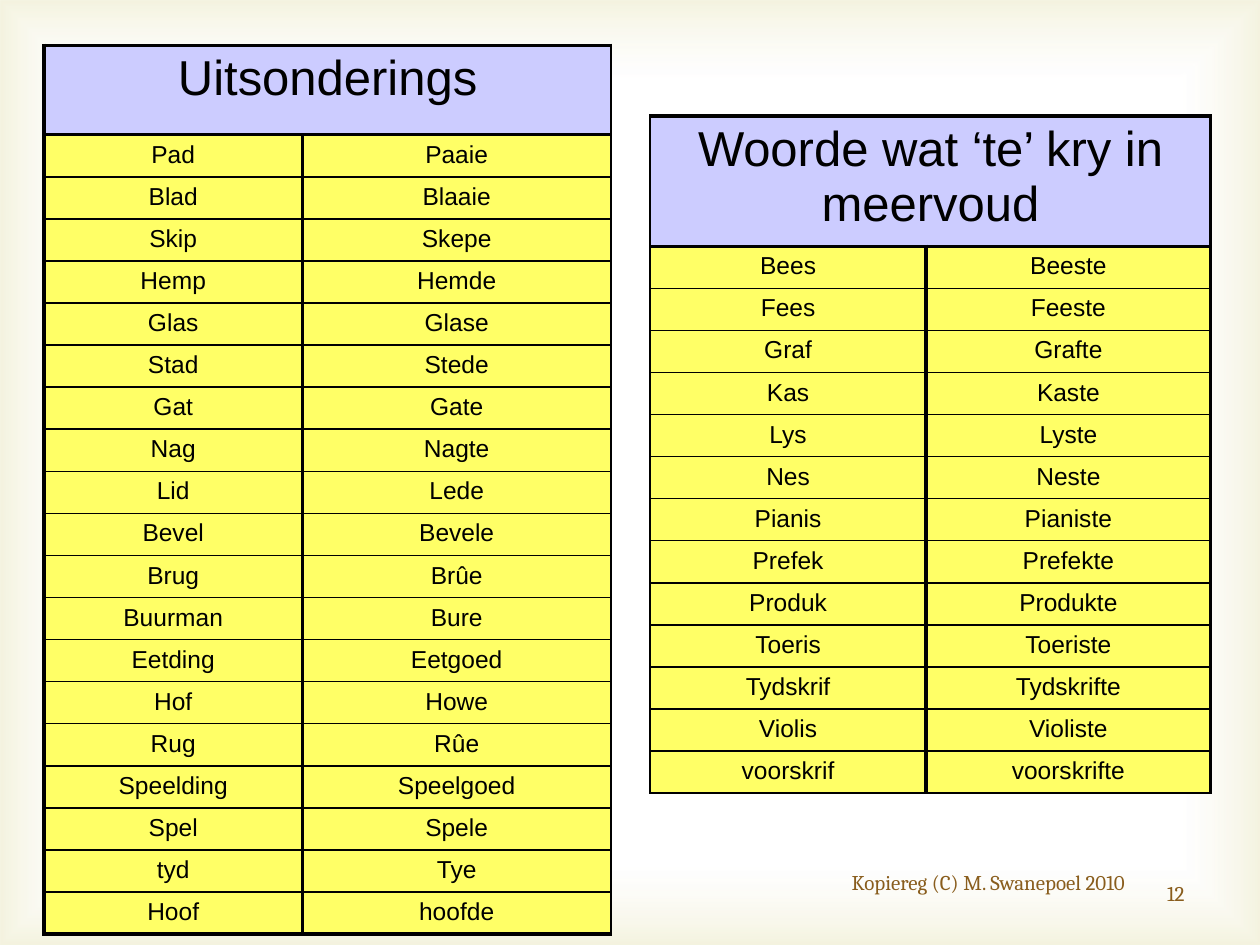
from lxml.etree import SubElement
from pptx import Presentation
from pptx.dml.color import RGBColor
from pptx.enum.shapes import MSO_SHAPE
from pptx.enum.text import MSO_ANCHOR, PP_ALIGN
from pptx.oxml import parse_xml
from pptx.oxml.ns import nsdecls, qn
from pptx.util import Inches, Pt

THIN, THICK = 1, 2.25
HEADER_HEIGHT, ROW_HEIGHT = 0.71, 0.33

EXCEPTIONS = [
    ("Pad", "Paaie"), ("Blad", "Blaaie"), ("Skip", "Skepe"),
    ("Hemp", "Hemde"), ("Glas", "Glase"), ("Stad", "Stede"),
    ("Gat", "Gate"), ("Nag", "Nagte"), ("Lid", "Lede"),
    ("Bevel", "Bevele"), ("Brug", "Brûe"), ("Buurman", "Bure"),
    ("Eetding", "Eetgoed"), ("Hof", "Howe"), ("Rug", "Rûe"),
    ("Speelding", "Speelgoed"), ("Spel", "Spele"), ("tyd", "Tye"),
    ("Hoof", "hoofde"),
]
TE_PLURALS = [
    ("Bees", "Beeste"), ("Fees", "Feeste"), ("Graf", "Grafte"),
    ("Kas", "Kaste"), ("Lys", "Lyste"), ("Nes", "Neste"),
    ("Pianis", "Pianiste"), ("Prefek", "Prefekte"),
    ("Produk", "Produkte"), ("Toeris", "Toeriste"),
    ("Tydskrif", "Tydskrifte"), ("Violis", "Violiste"),
    ("voorskrif", "voorskrifte"),
]


def rgb(value):
    return RGBColor.from_string(value)


def add_run(p, text, size, font, color):
    r = p.add_run()
    r.text = text
    r.font.size = Pt(size)
    r.font.name = font
    r.font.color.rgb = rgb(color)


def add_background(s, width, height):
    sp = s.shapes.add_shape(MSO_SHAPE.RECTANGLE, 0, 0, width, height)
    sp.shadow.inherit = False
    sp.line.fill.background()
    grad = parse_xml(
        f'<a:gradFill {nsdecls("a")} rotWithShape="1"><a:gsLst>'
        '<a:gs pos="83000"><a:srgbClr val="FFFFFF"><a:alpha val="11000"/></a:srgbClr></a:gs>'
        '<a:gs pos="100000"><a:srgbClr val="D1CA75"><a:alpha val="23000"/></a:srgbClr></a:gs>'
        '</a:gsLst><a:path path="rect">'
        '<a:fillToRect l="50000" t="50000" r="50000" b="50000"/></a:path></a:gradFill>')
    sp._element.spPr.find(qn("a:prstGeom")).addnext(grad)


def add_footer(s, text, left, top, width, align):
    sp = s.shapes.add_textbox(Inches(left), Inches(top), Inches(width), Inches(0.52))
    tf = sp.text_frame
    tf.word_wrap = True
    tf.vertical_anchor = MSO_ANCHOR.MIDDLE
    p = tf.paragraphs[0]
    p.alignment = align
    add_run(p, text, 12, "Cambria", "895D1D")


def set_borders(cell, left, right, top, bottom):
    tc_pr = cell._tc.get_or_add_tcPr()
    for side, width in zip("LRTB", (left, right, top, bottom)):
        ln = SubElement(tc_pr, qn(f"a:ln{side}"), w=str(Pt(width)))
        fill = SubElement(ln, qn("a:solidFill"))
        SubElement(fill, qn("a:srgbClr"), val="000000")


def write_cell(cell, text, size):
    p = cell.text_frame.paragraphs[0]
    p.alignment = PP_ALIGN.CENTER
    before = SubElement(p._p.get_or_add_pPr(), qn("a:spcBef"))
    SubElement(before, qn("a:spcPct"), val="20000")
    add_run(p, text, size, "Arial", "000000")


def add_word_table(s, title, words, left, top, widths, edges):
    left_edge, right_edge, bottom_edge = edges
    height = HEADER_HEIGHT + ROW_HEIGHT * len(words)
    table = s.shapes.add_table(len(words) + 1, 2, Inches(left), Inches(top),
                               Inches(sum(widths)), Inches(height)).table
    table.first_row = False
    table.horz_banding = False
    for column, width in zip(table.columns, widths):
        column.width = Inches(width)
    for i, row in enumerate(table.rows):
        row.height = Inches(ROW_HEIGHT if i else HEADER_HEIGHT)
        top_line = THICK if i < 2 else THIN
        bottom_line = THICK if i == 0 else bottom_edge if i == len(words) else THIN
        for j, cell in enumerate(row.cells):
            set_borders(cell,
                        left_edge if j == 0 else THICK,
                        right_edge if j == 1 or i == 0 else THICK,
                        top_line, bottom_line)
            cell.fill.solid()
            cell.fill.fore_color.rgb = rgb("FFFF66" if i else "CCCCFF")
            if i:
                write_cell(cell, words[i - 1][j], 14)
    header = table.cell(0, 0)
    header.merge(table.cell(0, 1))
    write_cell(header, title, 28)


def main():
    prs = Presentation()
    prs.slide_width, prs.slide_height = Inches(10), Inches(7.5)
    s = prs.slides.add_slide(prs.slide_layouts[6])
    add_background(s, prs.slide_width, prs.slide_height)
    add_footer(s, "12", 7.17, 6.83, 2.33, PP_ALIGN.RIGHT)
    add_word_table(s, "Woorde wat ‘te’ kry in meervoud", TE_PLURALS,
                   5.16, 0.92, (2.19, 2.26), (THIN, THICK, THIN))
    add_footer(s, "Kopiereg (C) M. Swanepoel 2010", 6.26, 6.74, 3.17, PP_ALIGN.CENTER)
    add_word_table(s, "Uitsonderings", EXCEPTIONS,
                   0.35, 0.36, (2.05, 2.45), (THICK, THIN, THICK))
    prs.save("out.pptx")


if __name__ == "__main__":
    main()
